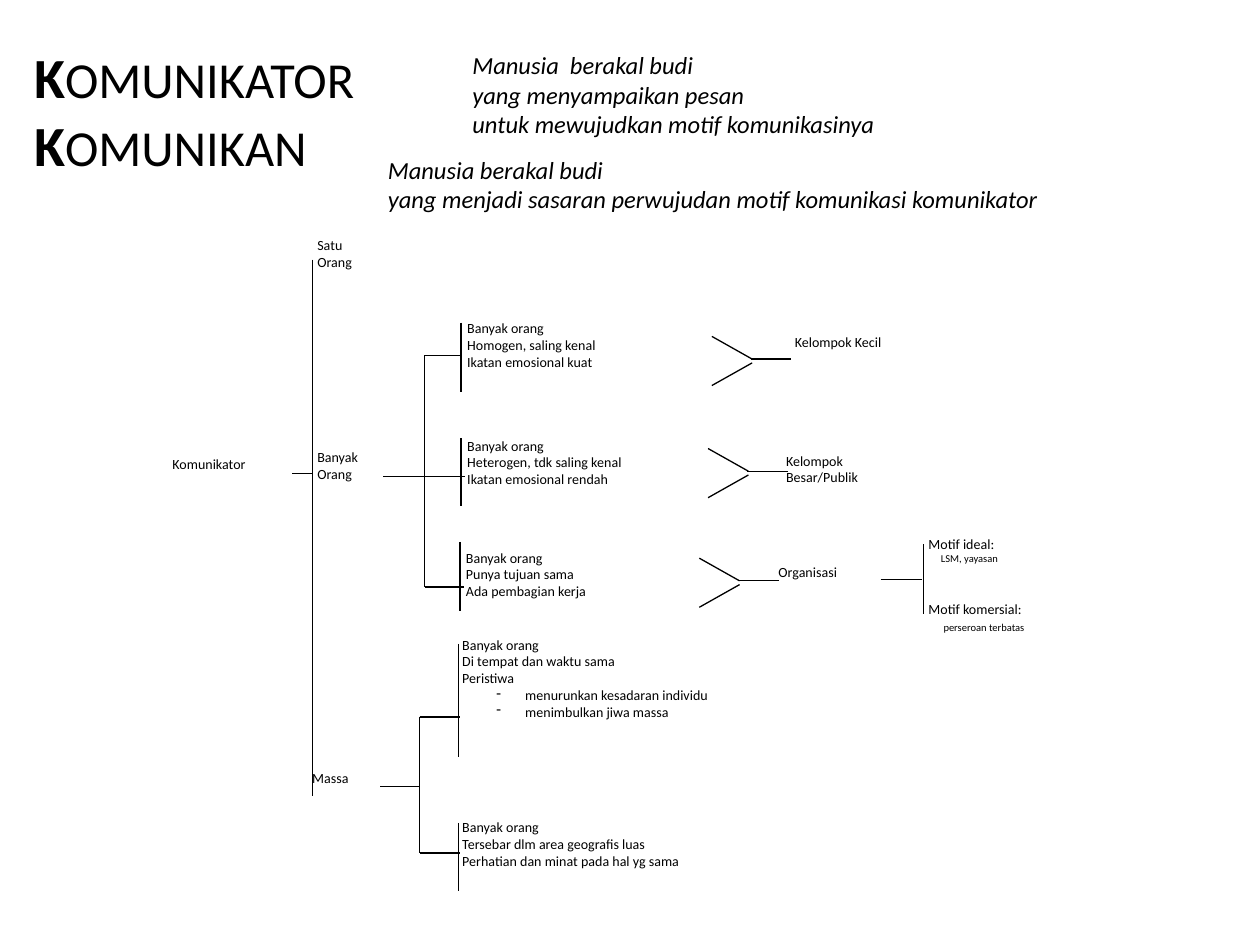
import pptx
import pptx.util
import pptx.dml.color
import pptx.enum.shapes
import pptx.enum.text
import lxml.etree

WIDE, HIGH = 10, 7.5
FONT = "Calibri"
BLACK, WHITE = "000000", "FFFFFF"
MANY = "Banyak orang"

TITLE = [("K", "OMUNIKATOR"), ("K", "OMUNIKAN")]

# left, top, width, height, lines
QUOTES = [
    (3.65, 0.35, 5.52, 0.8, ["Manusia  berakal budi", "yang menyampaikan pesan",
                             "untuk mewujudkan motif komunikasinya"]),
    (2.98, 1.18, 6.43, 0.57, ["Manusia berakal budi",
     "yang menjadi sasaran perwujudan motif komunikasi komunikator"]),
]
FILLED = [
    (1.27, 3.57, 1.13, 0.36, ["Komunikator"]),
    (2.42, 1.83, 1.13, 0.54, ["Satu", "Orang"]),
    (7.27, 4.72, 1.66, 0.54, ["Motif komersial:"]),
    (6.08, 4.42, 1.13, 0.54, ["Organisasi"]),
    (6.21, 2.6, 1.13, 0.54, ["Kelompok Kecil"]),
    (6.14, 3.54, 1.13, 0.54, ["Kelompok Besar/Publik"]),
]
PLAIN = [
    (2.42, 3.51, 1.13, 0.53, ["Banyak", "Orang"]),
    (2.38, 6.06, 1.13, 0.54, ["Massa"]),
    (3.61, 2.49, 2.1, 0.73, [MANY, "Homogen, saling kenal", "Ikatan emosional kuat"]),
    (3.61, 3.42, 2.18, 0.73, [MANY, "Heterogen, tdk saling kenal",
                              "Ikatan emosional rendah"]),
    (3.6, 4.31, 2.1, 0.73, [MANY, "Punya tujuan sama", "Ada pembagian kerja"]),
    (3.57, 5, 2.92, 1.44, [MANY, "Di tempat dan waktu sama", "Peristiwa"]),
    (3.57, 6.45, 2.92, 0.79, [MANY, "Tersebar dlm area geografis luas",
                              "Perhatian dan minat pada hal yg sama"]),
    (7.27, 4.2, 1.33, 0.54, ["Motif ideal:"]),
]
EFFECTS = ["menurunkan kesadaran individu", "menimbulkan jiwa massa"]
# motive, example, indent in inches, space before in points
CASES = [("Motif ideal:", "LSM, yayasan", 0.1, 0),
         ("Motif komersial:", "perseroan terbatas", 0.12, 2)]

# x, top, bottom
BARS = [(2.48, 2.06, 6.32), (3.37, 2.82, 4.66), (3.33, 5.69, 6.77),
        (3.66, 2.56, 3.11), (3.66, 3.48, 4.02), (3.65, 4.3, 4.85),
        (3.64, 5.11, 6.01), (3.64, 6.53, 7.07), (7.33, 4.32, 4.87)]
# y, left, right
TWIGS = [(3.76, 2.32, 2.48), (3.78, 3.04, 3.69), (2.82, 3.37, 3.65),
         (4.66, 3.37, 3.68), (6.24, 3.02, 3.33), (5.69, 3.33, 3.65),
         (6.77, 3.33, 3.65), (4.6, 6.99, 7.32)]
# points where two slanted arms meet a stem
TIPS = [(5.97, 2.85), (5.94, 3.74), (5.87, 4.61)]

inch, pt = pptx.util.Inches, pptx.util.Pt


def color(code):
    return pptx.dml.color.RGBColor.from_string(code)


def style(font, size, italic=False):
    font.name, font.size, font.italic = FONT, pt(size), italic
    font.color.rgb = color(BLACK)


def add_line(slide, x1, y1, x2, y2):
    line = slide.shapes.add_connector(
        pptx.enum.shapes.MSO_CONNECTOR.STRAIGHT, *map(inch, (x1, y1, x2, y2)))
    line.line.color.rgb = color(BLACK)
    line.line.width = pt(0.75)
    props = line.element.spPr
    lxml.etree.SubElement(props, pptx.oxml.ns.qn("a:effectLst"))


def add_para(frame, text, size):
    para = frame.add_paragraph()
    para.text = text
    style(para.font, size)
    return para


def add_text(slide, left, top, width, height, lines, size=8, italic=False, fill=False):
    place = [inch(n) for n in (left, top, width, height)]
    if fill:
        box = slide.shapes.add_shape(pptx.enum.shapes.MSO_SHAPE.RECTANGLE, *place)
        box.shadow.inherit = False
        box.fill.solid()
        box.fill.fore_color.rgb = color(WHITE)
        box.line.fill.background()
    else:
        box = slide.shapes.add_textbox(*place)
    frame = box.text_frame
    frame.word_wrap = True
    frame.vertical_anchor = pptx.enum.text.MSO_ANCHOR.TOP
    frame.text = "\n".join(lines)
    for para in frame.paragraphs:
        para.alignment = pptx.enum.text.PP_ALIGN.LEFT
        style(para.font, size, italic)
    return frame


def indent(para, left, first=0, bullet=None):
    props = para._p.get_or_add_pPr()
    props.set("marL", str(inch(left)))
    props.set("indent", str(inch(first)))
    if bullet:
        mark = lxml.etree.SubElement(props, pptx.oxml.ns.qn("a:buChar"))
        mark.set("char", bullet)


def add_title(slide):
    title = slide.shapes.title
    title.left, title.top, title.width, title.height = map(inch, (0.17, 0.25, 9, 1.25))
    frame = title.text_frame
    frame.auto_size = pptx.enum.text.MSO_AUTO_SIZE.NONE
    frame.vertical_anchor = pptx.enum.text.MSO_ANCHOR.MIDDLE
    para = frame.paragraphs[0]
    para.alignment = pptx.enum.text.PP_ALIGN.LEFT
    for row, (head, rest) in enumerate(TITLE):
        if row:
            para.add_line_break()
        for text, size, bold in ((head, 32.4, True), (rest, 28.8, False)):
            run = para.add_run()
            run.text = text
            style(run.font, size)
            run.font.bold = bold


def main():
    deck = pptx.Presentation()
    deck.slide_width, deck.slide_height = inch(WIDE), inch(HIGH)
    slide = deck.slides.add_slide(deck.slide_layouts[5])
    add_title(slide)

    frames = {}
    for group, fill in ((FILLED, True), (PLAIN, False)):
        for *place, lines in group:
            frames[lines[-1]] = add_text(slide, *place, lines, fill=fill)
    for effect in EFFECTS:
        indent(add_para(frames["Peristiwa"], effect, 8), 0.5, -0.23, "-")
    for motive, case, left, gap in CASES:
        para = add_para(frames[motive], case, 6)
        para.alignment = pptx.enum.text.PP_ALIGN.LEFT
        para.space_before = pt(gap)
        indent(para, left)

    for x, top, bottom in BARS:
        add_line(slide, x, top, x, bottom)
    for y, left, right in TWIGS:
        add_line(slide, left, y, right, y)
    for x, y in TIPS:
        add_line(slide, x - 0.32, y - 0.18, x, y)
        add_line(slide, x, y + 0.03, x - 0.32, y + 0.21)
        add_line(slide, x - 0.01, y, x + 0.31, y)

    for *place, lines in QUOTES:
        add_text(slide, *place, lines, size=14, italic=True)
    deck.save("out.pptx")


if __name__ == "__main__":
    main()
